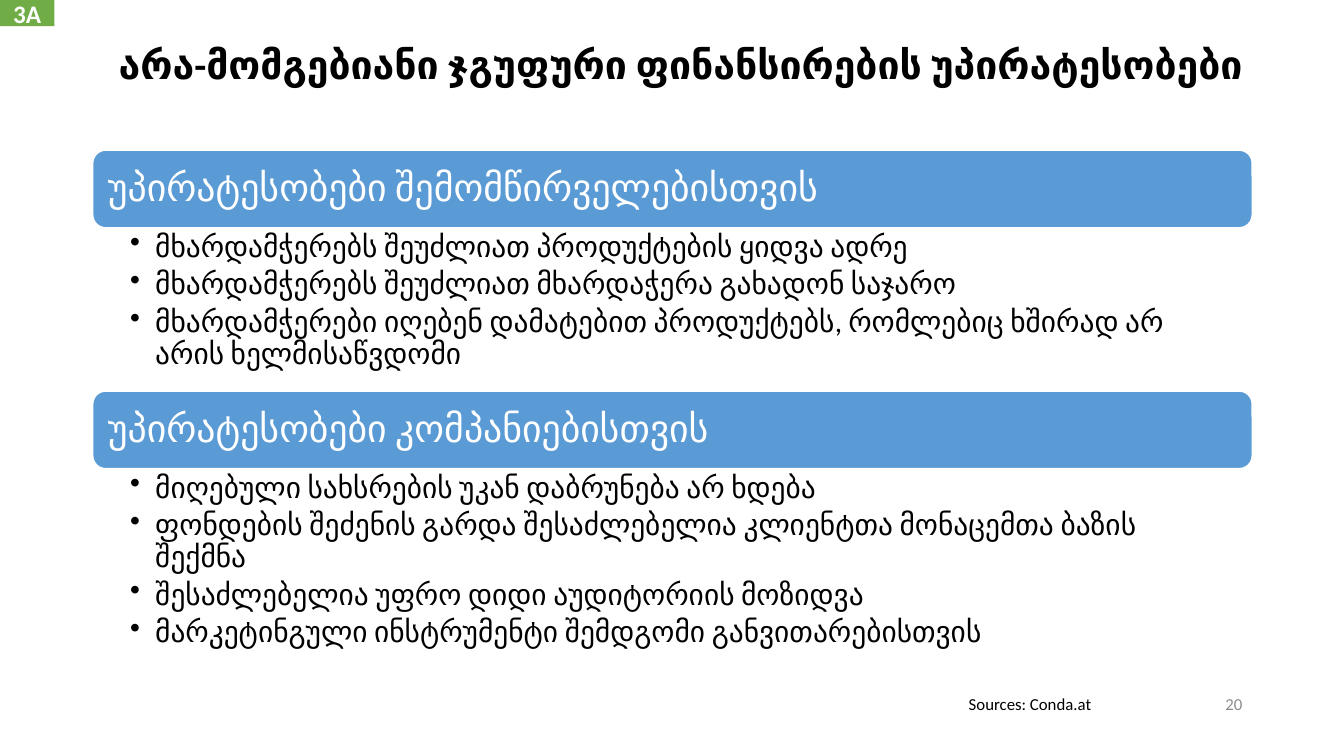
from lxml.etree import SubElement
from pptx import Presentation
from pptx.dml.color import RGBColor
from pptx.enum.shapes import MSO_SHAPE
from pptx.enum.text import MSO_ANCHOR, MSO_AUTO_SIZE, PP_ALIGN
from pptx.oxml.ns import qn
from pptx.util import Inches, Pt

FONT = "Calibri"
HEX = {"blue": "5B9BD5", "green": "70AD47", "white": "FFFFFF",
       "black": "000000", "gray": "8C8C8C"}
LEFT, WIDE, BAR = 0.92, 11.5, 0.77

# Top and height of each section, then its heading and bullets
PARTS = [
    (1.49, 2.39, "უპირატესობები შემომწირველებისთვის", [
        "მხარდამჭერებს შეუძლიათ პროდუქტების ყიდვა ადრე",
        "მხარდამჭერებს შეუძლიათ მხარდაჭერა გახადონ საჯარო",
        "მხარდამჭერები იღებენ დამატებით პროდუქტებს, "
        "რომლებიც ხშირად არ არის ხელმისაწვდომი"]),
    (3.88, 2.47, "უპირატესობები კომპანიებისთვის", [
        "მიღებული სახსრების უკან დაბრუნება არ ხდება",
        "ფონდების შეძენის გარდა შესაძლებელია კლიენტთა მონაცემთა ბაზის შექმნა",
        "შესაძლებელია უფრო დიდი აუდიტორიის მოზიდვა",
        "მარკეტინგული ინსტრუმენტი შემდგომი განვითარებისთვის"]),
]


def color(name):
    return RGBColor.from_string(HEX[name])


def write(para, text, size, ink, bold=False, align=PP_ALIGN.LEFT):
    para.alignment = align
    run = para.add_run()
    run.text = text
    font = run.font
    font.name, font.size, font.bold = FONT, Pt(size), bold
    font.color.rgb = color(ink)


def add_box(slide, box, inset=(0.1, 0.05, 0.1, 0.05), anchor=MSO_ANCHOR.TOP):
    frame = slide.shapes.add_textbox(*map(Inches, box)).text_frame
    frame.word_wrap = True
    frame.vertical_anchor = anchor
    (frame.margin_left, frame.margin_top,
     frame.margin_right, frame.margin_bottom) = map(Inches, inset)
    return frame


def add_form(slide, kind, box, fill):
    form = slide.shapes.add_shape(kind, *map(Inches, box))
    form.shadow.inherit = False
    form.fill.solid()
    form.fill.fore_color.rgb = color(fill)
    return form


def add_dot(para):
    props = para._p.get_or_add_pPr()
    props.set("marL", str(Inches(0.25)))
    props.set("indent", str(Inches(-0.25)))
    SubElement(props, qn("a:buChar")).set("char", "•")


def add_part(slide, box, head, items):
    left, top, width, height = box

    # Heading bar
    bar = add_form(slide, MSO_SHAPE.ROUNDED_RECTANGLE,
                   (left, top, width, BAR), "blue")
    bar.line.color.rgb = color("white")
    bar.line.width = Pt(1)
    pad = 0.04
    frame = add_box(slide, (left + pad, top + pad, width - 2 * pad, BAR - 2 * pad),
                    (0.11,) * 4, MSO_ANCHOR.MIDDLE)
    para = frame.paragraphs[0]
    para.line_spacing = 0.9
    write(para, head, 27, "white")

    # Bullet list
    frame = add_box(slide, (left, top + BAR, width, height - BAR),
                    (0.37, 0.04, 0.21, 0.04))
    for i, item in enumerate(items):
        para = frame.add_paragraph() if i else frame.paragraphs[0]
        add_dot(para)
        para.line_spacing = 0.9
        para.space_after = Pt(4.2)
        write(para, item, 21, "black")


def add_title(slide, box):
    para = add_box(slide, box).paragraphs[0]
    para.line_spacing = 0.9
    write(para, "არა-მომგებიანი ჯგუფური ფინანსირების უპირატესობები",
          28, "black", True, PP_ALIGN.RIGHT)


def add_tag(slide, box):
    tag = add_form(slide, MSO_SHAPE.RECTANGLE, box, "green")
    tag.line.fill.background()
    frame = tag.text_frame
    frame.vertical_anchor = MSO_ANCHOR.MIDDLE
    write(frame.paragraphs[0], "3A", 18, "white", True, PP_ALIGN.CENTER)


def add_foot(slide, box):
    left, top, width, height = box
    # Page number
    frame = add_box(slide, box, anchor=MSO_ANCHOR.MIDDLE)
    write(frame.paragraphs[0], "20", 12, "gray", align=PP_ALIGN.RIGHT)
    # Source line
    frame = add_box(slide, (left + 0.09, top + 0.05, 1.43, 0.3))
    frame.word_wrap = False
    frame.auto_size = MSO_AUTO_SIZE.SHAPE_TO_FIT_TEXT
    write(frame.paragraphs[0], "Sources: Conda.at", 12, "black")


def main():
    deck = Presentation()
    deck.slide_width, deck.slide_height = Inches(13.33), Inches(7.5)
    slide = deck.slides.add_slide(deck.slide_layouts[6])
    for top, height, head, items in PARTS:
        add_part(slide, (LEFT, top, WIDE, height), head, items)
    add_title(slide, (LEFT, 0.4, WIDE, 0.57))
    add_foot(slide, (9.42, 6.78, 3, 0.4))
    add_tag(slide, (0, 0, 0.54, 0.26))
    deck.save("out.pptx")


if __name__ == "__main__":
    main()
